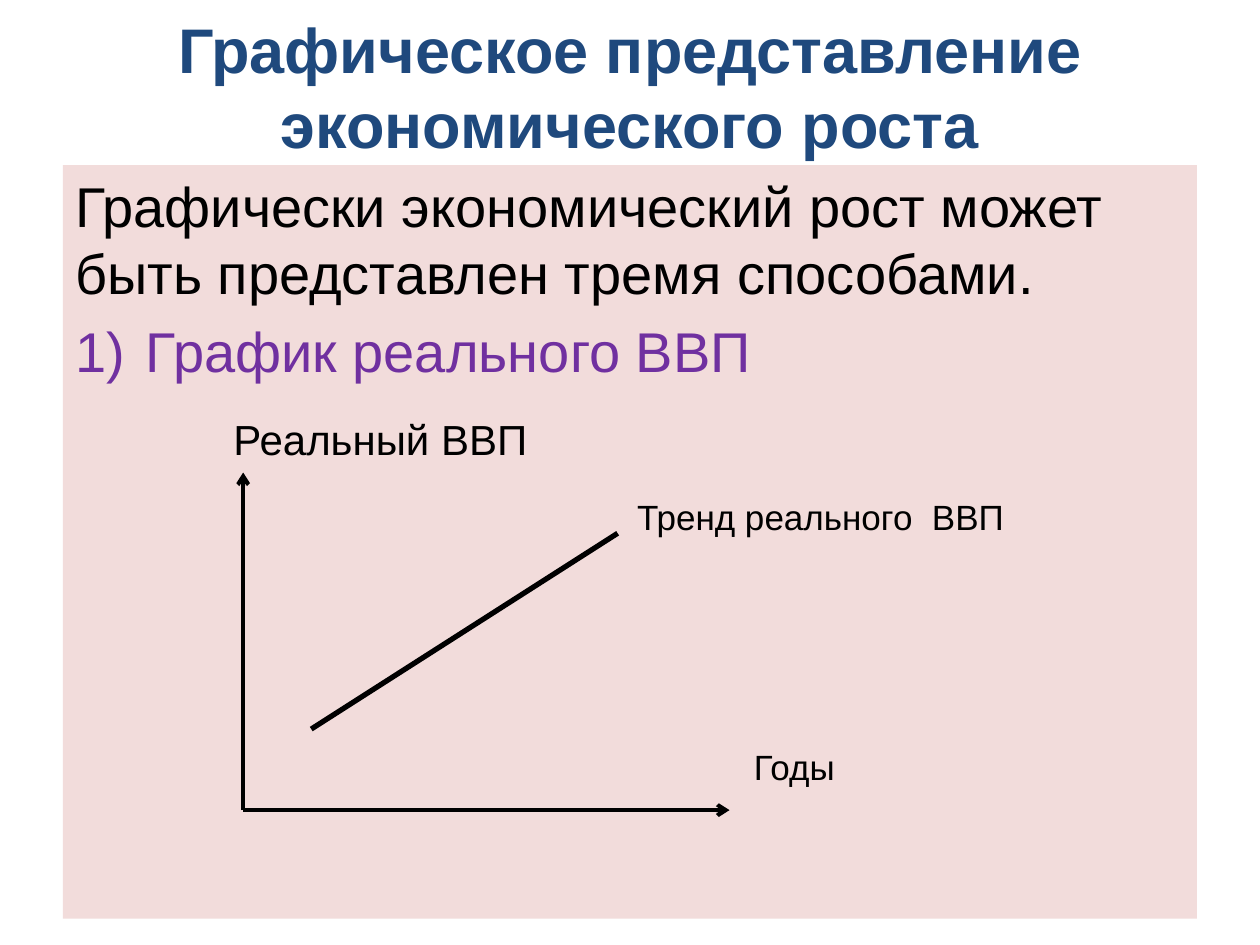
from pptx import Presentation
from pptx.dml.color import RGBColor as Rgb
from pptx.enum.shapes import MSO_CONNECTOR as Line, MSO_SHAPE as Kind
from pptx.enum.text import MSO_ANCHOR as Anchor, PP_ALIGN as Align
from pptx.oxml.ns import qn
from pptx.util import Inches, Pt
from lxml.etree import SubElement as sub

WIDE, HIGH = Inches(10), Inches(7.5)
HUES = {"title": "1F497D", "panel": "F2DCDB", "text": "000000", "item": "7030A0"}


def area(x, y, w, h):
    """Turn percentages of the slide into a box."""
    return [round(s * v / 100) for s, v in
            ((WIDE, x), (HIGH, y), (WIDE, w), (HIGH, h))]


def spot(box, x, y):
    """Find a point from its shares of the box."""
    left, top, wide, high = box
    return round(left + x * wide), round(top + y * high)


def style(para, size, hue, **more):
    look = {"name": "Arial", "size": Pt(size), **more}
    for run in para.runs:
        for key, val in look.items():
            setattr(run.font, key, val)
        run.font.color.rgb = Rgb.from_string(HUES[hue])


def set_frame(shape, **more):
    look = {"word_wrap": True, **more}
    for key, val in look.items():
        setattr(shape.text_frame, key, val)


def add_title(slide, box):
    title = slide.shapes.title
    title.left, title.top, title.width, title.height = box
    set_frame(title, text="Графическое представление экономического роста",
              vertical_anchor=Anchor.MIDDLE)
    para = title.text_frame.paragraphs[0]
    para.alignment = Align.CENTER
    style(para, 36, "title", bold=True)


def add_panel(slide, box):
    panel = slide.shapes.add_shape(Kind.RECTANGLE, *box)
    panel.shadow.inherit = False
    panel.fill.solid()
    panel.fill.fore_color.rgb = Rgb.from_string(HUES["panel"])
    panel.line.fill.background()
    set_frame(panel, vertical_anchor=Anchor.TOP)
    frame = panel.text_frame
    intro, item = frame.paragraphs[0], frame.add_paragraph()
    intro.text = "Графически экономический рост может быть представлен тремя способами."
    item.text = "График реального ВВП"
    for para, hue in ((intro, "text"), (item, "item")):
        para.alignment = Align.LEFT
        para.space_before = Pt(6.4)
        style(para, 32, hue)
    props = item._p.get_or_add_pPr()
    props.set("marL", str(Inches(0.56)))
    props.set("indent", str(-Inches(0.56)))
    sub(props, qn("a:buFont"), typeface="Arial")
    sub(props, qn("a:buAutoNum"), type="arabicParenR")


def add_line(slide, start, end, width, arrow):
    line = slide.shapes.add_connector(Line.STRAIGHT, *start, *end)
    line.line.width = Pt(width)
    line.line.color.rgb = Rgb.from_string(HUES["text"])
    if arrow:
        sub(line.line._get_or_add_ln(), qn("a:tailEnd"), type="arrow")
    sub(line._element.spPr, qn("a:effectLst"))


def add_label(slide, start, size, text):
    """Place text with its left edge centred on the start point."""
    x, y = start
    high = Inches(0.4)
    label = slide.shapes.add_textbox(x, y - high // 2, Inches(3.4), high)
    set_frame(label, text=text, vertical_anchor=Anchor.MIDDLE, margin_left=0,
              margin_right=0, margin_top=0, margin_bottom=0)
    style(label.text_frame.paragraphs[0], size, "text")


def add_plot(slide, box):
    """Draw the axes, the trend and their labels; the box spans the axes."""
    for start, end, width, arrow in (
            ((0, 1), (0, 0), 2.25, True),
            ((0, 1), (1, 1), 2.25, True),
            ((0.14, 0.76), (0.77, 0.18), 3, False)):
        add_line(slide, spot(box, *start), spot(box, *end), width, arrow)
    for start, size, text in (
            ((-0.02, -0.1), 24, "Реальный ВВП"),
            ((0.81, 0.13), 20, "Тренд реального  ВВП"),
            ((1.05, 0.87), 20, "Годы")):
        add_label(slide, spot(box, *start), size, text)


def main():
    deck = Presentation()
    deck.slide_width, deck.slide_height = WIDE, HIGH
    slide = deck.slides.add_slide(deck.slide_layouts[5])
    add_title(slide, area(5, 1.73, 90, 14.67))
    add_panel(slide, area(5, 17.47, 90, 79.73))
    add_plot(slide, area(19.3, 50, 38.6, 35.73))
    deck.save("out.pptx")


if __name__ == "__main__":
    main()
